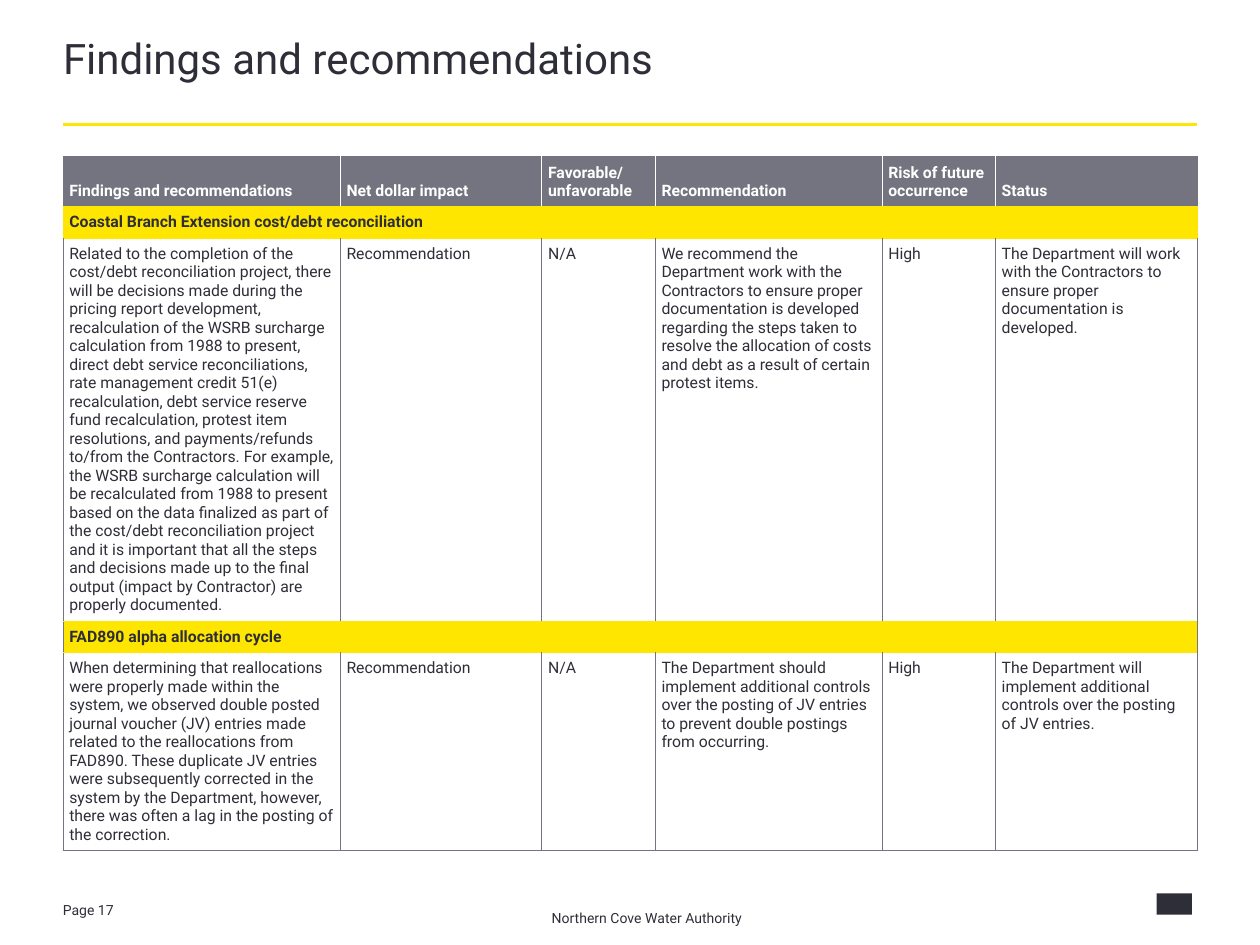
import pptx
import pptx.dml.color
import pptx.enum.shapes
import pptx.enum.text
import pptx.oxml
import pptx.oxml.ns
import pptx.util
from lxml import etree
from pptx.util import Inches

COLORS = {"ink": "2E2E38", "grey": "747480", "yellow": "FFE600", "white": "FFFFFF"}
FONT = "Roboto"


def color(name):
    return pptx.dml.color.RGBColor.from_string(COLORS[name])


def format_font(paragraph, size, name="ink", bold=False):
    paragraph.font.name = FONT
    paragraph.font.size = pptx.util.Pt(size)
    paragraph.font.bold = bold
    paragraph.font.color.rgb = color(name)


presentation = pptx.Presentation()
presentation.slide_width = Inches(10)
presentation.slide_height = Inches(7.5)
slide = presentation.slides.add_slide(presentation.slide_layouts[5])

# Title and the rule below it
title = slide.shapes.title
title.left, title.top, title.width, title.height = Inches(0.5), Inches(0.32), Inches(9), Inches(0.65)
heading = title.text_frame
heading.text = "Findings and recommendations"
heading.auto_size = pptx.enum.text.MSO_AUTO_SIZE.NONE
heading.vertical_anchor = pptx.enum.text.MSO_ANCHOR.TOP
heading.margin_left = heading.margin_top = heading.margin_right = heading.margin_bottom = 0
heading.paragraphs[0].alignment = pptx.enum.text.PP_ALIGN.LEFT
heading.paragraphs[0].line_spacing = 0.85
format_font(heading.paragraphs[0], 24)

rule = slide.shapes.add_connector(
    pptx.enum.shapes.MSO_CONNECTOR.STRAIGHT, Inches(0.5), Inches(0.99), Inches(9.5), Inches(0.99))
rule.line.color.rgb = color("yellow")
rule.line.width = pptx.util.Pt(1.5)
etree.SubElement(rule._element.spPr, pptx.oxml.ns.qn("a:effectLst"))

# Findings table: a row with a single text is a section band
findings = [
    ["Findings and recommendations", "Net dollar impact", "Favorable/\vunfavorable",
     "Recommendation", "Risk of future occurrence", "Status"],
    ["Coastal Branch Extension cost/debt reconciliation"],
    ["Related to the completion of the cost/debt reconciliation project, there will be decisions "
     "made during the pricing report development, recalculation of the WSRB surcharge calculation "
     "from 1988 to present, direct debt service reconciliations, rate management credit 51(e) "
     "recalculation, debt service reserve fund recalculation, protest item resolutions, and "
     "payments/refunds to/from the Contractors. For example, the WSRB surcharge calculation will "
     "be recalculated from 1988 to present based on the data finalized as part of the cost/debt "
     "reconciliation project and it is important that all the steps and decisions made up to the "
     "final output (impact by Contractor) are properly documented.",
     "Recommendation", "N/A",
     "We recommend the Department work with the Contractors to ensure proper documentation is "
     "developed regarding the steps taken to resolve the allocation of costs and debt as a result "
     "of certain protest items.",
     "High",
     "The Department will work with the Contractors to ensure proper documentation is developed."],
    ["FAD890 alpha allocation cycle"],
    ["When determining that reallocations were properly made within the system, we observed double "
     "posted journal voucher (JV) entries made related to the reallocations from FAD890. These "
     "duplicate JV entries were subsequently corrected in the system by the Department, however, "
     "there was often a lag in the posting of the correction.",
     "Recommendation", "N/A",
     "The Department should implement additional controls over the posting of JV entries to "
     "prevent double postings from occurring.",
     "High",
     "The Department will implement additional controls over the posting of JV entries."],
]
column_widths = [2.2, 1.6, 0.9, 1.8, 0.9, 1.6]
row_heights = [0.4, 0.25, 3.04, 0.25, 1.57]
last_row, last_column = len(row_heights) - 1, len(column_widths) - 1

table = slide.shapes.add_table(
    len(row_heights), len(column_widths), Inches(0.5), Inches(1.24),
    Inches(sum(column_widths)), Inches(sum(row_heights))).table
table.first_row = table.horz_banding = False
for column, width in zip(table.columns, column_widths):
    column.width = Inches(width)

for r, texts in enumerate(findings):
    table.rows[r].height = Inches(row_heights[r])
    header, band = r == 0, len(texts) == 1
    if band:
        table.cell(r, 0).merge(table.cell(r, last_column))
    for c in range(last_column + 1):
        cell = table.cell(r, c)

        # Borders: white between headers, yellow around bands, grey elsewhere
        inner = "white" if header else "grey"
        borders = {
            "L": inner if c > 0 else "grey",
            "R": inner if c < last_column else "grey",
            "T": "grey" if header else "yellow",
            "B": "grey" if r == last_row else "yellow",
        }
        if r == 1:
            borders = dict.fromkeys(borders, "yellow")
        for side, name in borders.items():
            cell._tc.get_or_add_tcPr().append(pptx.oxml.parse_xml(
                f'<a:ln{side} {pptx.oxml.ns.nsdecls("a")} w="6350"><a:solidFill>'
                f'<a:srgbClr val="{COLORS[name]}"/></a:solidFill></a:ln{side}>'))

        cell.fill.solid()
        cell.fill.fore_color.rgb = color("grey" if header else "yellow" if band else "white")
        cell.margin_left = cell.margin_top = cell.margin_right = cell.margin_bottom = Inches(0.05)
        cell.vertical_anchor = (
            pptx.enum.text.MSO_ANCHOR.BOTTOM if header else pptx.enum.text.MSO_ANCHOR.TOP)
        if c < len(texts):
            cell.text = texts[c]
            paragraph = cell.text_frame.paragraphs[0]
            format_font(paragraph, 9, "white" if header else "ink", header or band)
            if r > 1:
                paragraph.space_before = paragraph.space_after = pptx.util.Pt(2)

# Page number and footer
for text, left, top, width, height in [
    ("Page 17", 0.4, 7.12, 0.73, 0.2),
    ("Northern Cove Water Authority", 4.28, 7.2, 1.86, 0.17),
]:
    footer = slide.shapes.add_textbox(
        Inches(left), Inches(top), Inches(width), Inches(height)).text_frame
    footer.text = text
    footer.word_wrap = True
    footer.margin_top = footer.margin_bottom = 0
    footer.vertical_anchor = pptx.enum.text.MSO_ANCHOR.MIDDLE
    format_font(footer.paragraphs[0], 8)

# Plain mark in the bottom right corner
corner_mark = slide.shapes.add_shape(
    pptx.enum.shapes.MSO_SHAPE.RECTANGLE, Inches(9.18), Inches(7.09), Inches(0.28), Inches(0.17))
corner_mark.shadow.inherit = False
corner_mark.fill.solid()
corner_mark.fill.fore_color.rgb = color("ink")
corner_mark.line.fill.background()

presentation.save("out.pptx")
